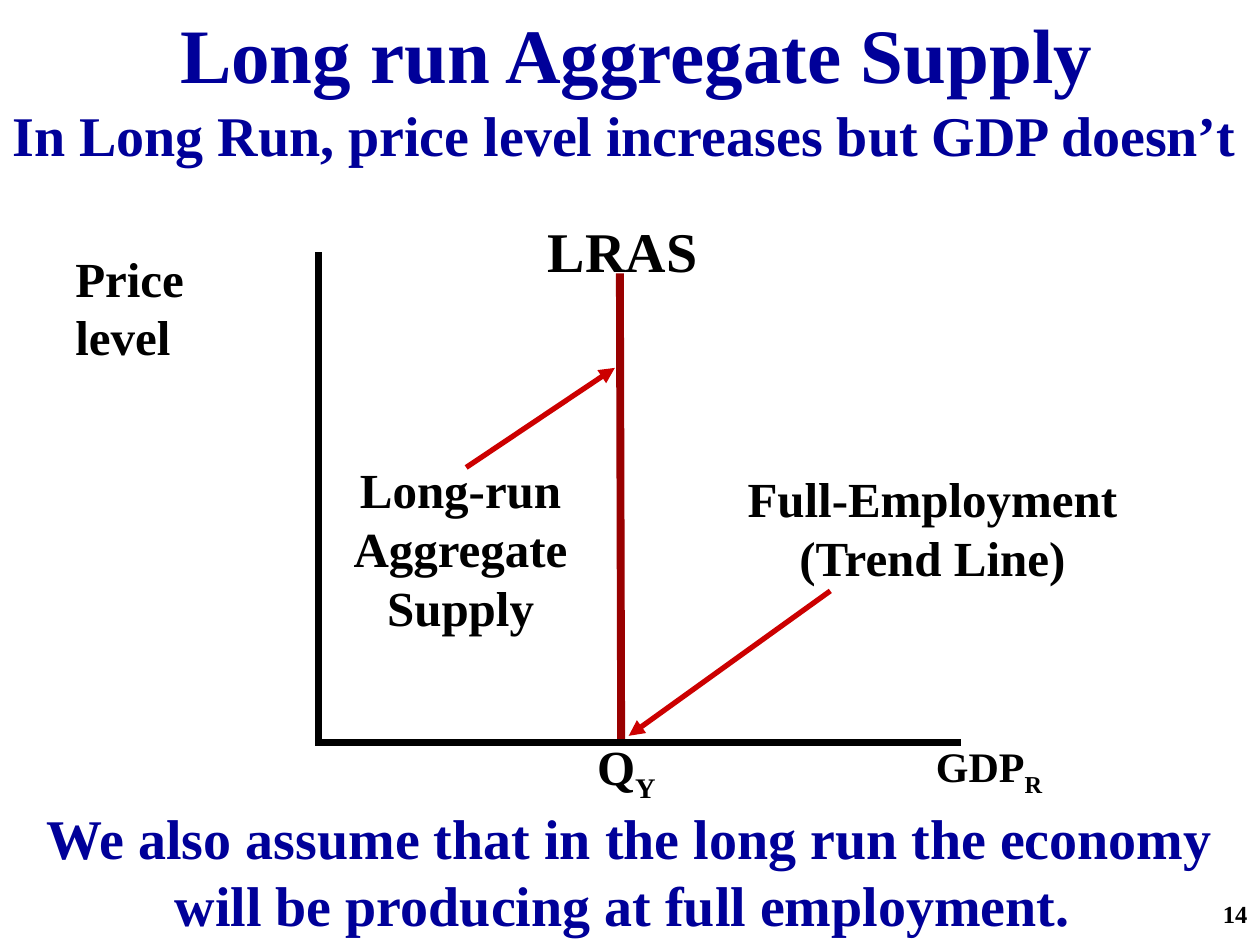
from pptx import Presentation
from pptx.dml.color import RGBColor
from pptx.enum.shapes import MSO_CONNECTOR
from pptx.enum.text import MSO_ANCHOR, MSO_AUTO_SIZE, PP_ALIGN
from pptx.oxml.ns import qn
from pptx.util import Inches, Pt
from lxml import etree

STRAIGHT = MSO_CONNECTOR.STRAIGHT
TOP, MIDDLE = MSO_ANCHOR.TOP, MSO_ANCHOR.MIDDLE
LEFT, CENTER, RIGHT = PP_ALIGN.LEFT, PP_ALIGN.CENTER, PP_ALIGN.RIGHT
FIXED = MSO_AUTO_SIZE.NONE
FONT = "Times New Roman"
NAVY, BLACK, MAROON, RED = "000099", "000000", "990000", "CC0000"
TITLE_ONLY = 5
COLUMNS, ROWS = 100, 75
UNIT = Inches(10) / COLUMNS


def colour(value):
    """Turn a hex string into a colour."""
    return RGBColor.from_string(value)


def grid(*cells):
    """Turn grid columns and rows into slide lengths."""
    return [round(cell * UNIT) for cell in cells]


def write(shape, text, size=28, ink=BLACK, align=LEFT, anchor=TOP, wrap=False, subscript=""):
    """Fill a shape with bold text, one paragraph a line."""
    frame = shape.text_frame
    frame.auto_size, frame.word_wrap, frame.vertical_anchor = FIXED, wrap, anchor
    frame.text = text
    if subscript:
        span = frame.paragraphs[-1].add_run()
        span.text = subscript
        span.font._element.set("baseline", "-25000")
    for para in frame.paragraphs:
        para.alignment = align
        for span in para.runs:
            span.font.name, span.font.size, span.font.bold = FONT, Pt(size), True
            span.font.color.rgb = colour(ink)


def add_text(page, box, text, **style):
    """Add a text box at a grid box."""
    write(page.shapes.add_textbox(*grid(*box)), text, **style)


def add_line(page, start, end, ink, weight, arrow=False):
    """Draw a straight line between two grid points."""
    connector = page.shapes.add_connector(STRAIGHT, *grid(*start, *end))
    connector.line.color.rgb, connector.line.width = colour(ink), Pt(weight)
    if arrow:
        etree.SubElement(connector.line._get_or_add_ln(), qn("a:tailEnd"), type="triangle")
    etree.SubElement(connector._element.spPr, qn("a:effectLst"))


def add_header(page, left, top, width):
    """Place the title and the statement under it."""
    title = page.shapes.title
    title.left, title.top, title.width, title.height = grid(left + 13.3, top, 74.9, 8.3)
    write(title, "Long run Aggregate Supply", size=44, ink=NAVY)
    add_text(page, (left, top + 7.5, width + 1.7, 6.3),
             "In Long Run, price level increases but GDP doesn’t",
             size=32, ink=NAVY, wrap=True)


def add_graph(page, left, top, width, height):
    """Draw the axes, supply curve, labels and arrows around a plot box."""
    floor = top + height - 0.1
    add_line(page, (left + 24.2, top + 1.7), (left + 24.3, floor), MAROON, 4.5)
    add_line(page, (left + 0.3, top), (left + 0.3, top + height), BLACK, 4)
    add_line(page, (left, floor), (left + width, floor), BLACK, 4)
    add_text(page, (left - 20, top - 0.8, 15, 10.3), "Price level", wrap=True)
    add_text(page, (left + 48.3, floor - 0.6, 10.6, 5), "GDP", size=24, subscript="R")
    add_text(page, (left + 21.4, floor - 0.9, 6.9, 5.7), "Q", subscript="Y")
    add_text(page, (left + 17.5, top - 3.3, 13.9, 6.3), "LRAS", size=32)
    add_text(page, (left + 2, top + 16, 19.1, 15), "Long-run\nAggregate\nSupply", align=CENTER)
    add_text(page, (left + 33.3, top + 16.7, 31.4, 10.3),
             "Full-Employment\n(Trend Line)", align=CENTER)
    add_line(page, (left + 12, top + 17.1), (left + 23.8, top + 9.2), RED, 3, arrow=True)
    add_line(page, (left + 40.9, top + 26.9), (left + 24.9, floor - 0.5), RED, 3, arrow=True)


def add_footer(page, left, top, width, height):
    """Place the closing statement and the page number."""
    add_text(page, (left, top, width, height),
             "We also assume that in the long run the economy "
             "will be producing at full employment. ",
             size=32, ink=NAVY, align=CENTER, wrap=True)
    add_text(page, (left + width - 5, top + height - 5, 5, 5), "14",
             size=14, align=RIGHT, anchor=MIDDLE, wrap=True)


def main():
    """Build the slide and save it."""
    deck = Presentation()
    deck.slide_width, deck.slide_height = grid(COLUMNS, ROWS)
    page = deck.slides.add_slide(deck.slide_layouts[TITLE_ONLY])
    add_header(page, 0, 0, COLUMNS)
    add_graph(page, 25, 20, 51.3, 39)
    add_footer(page, 0, 63.3, COLUMNS, 11.7)
    deck.save("out.pptx")


if __name__ == "__main__":
    main()
